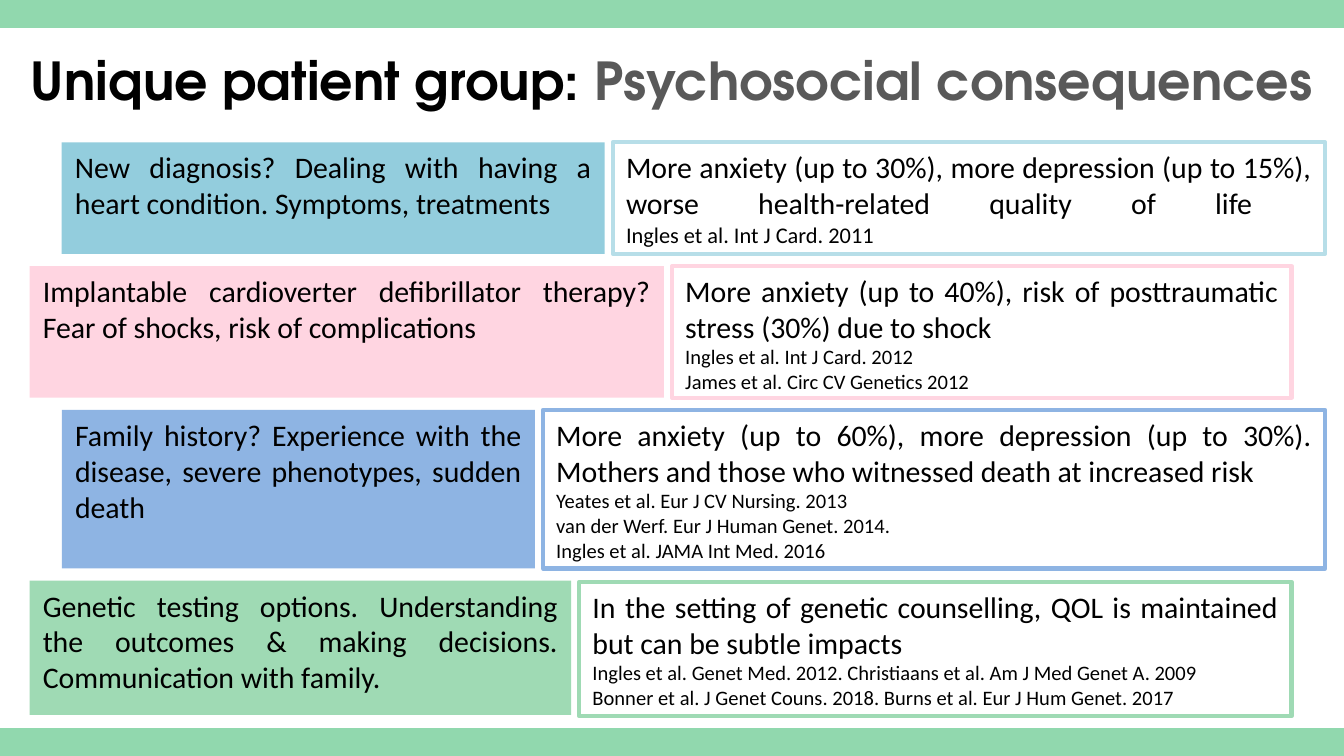
import pptx
import pptx.util
import pptx.dml.color
import pptx.enum.shapes
import pptx.enum.text

Inches, Pt = pptx.util.Inches, pptx.util.Pt
ALIGN = pptx.enum.text.PP_ALIGN
ANCHOR = pptx.enum.text.MSO_ANCHOR

# Content
TITLE = [("Unique patient group: ", "title"), ("Psychosocial consequences", "subtitle")]
ROWS = [
    dict(issue="New diagnosis? Dealing with having a heart condition. Symptoms, treatments",
         finding="More anxiety (up to 30%), more depression (up to 15%), "
                 "worse health-related quality of life ",
         refs=["Ingles et al. Int J Card. 2011"], ref_size=12, same_paragraph=True,
         fill="93CDDD", line="B7DEE8", width=4.04, height=0.83),
    dict(issue="Implantable cardioverter defibrillator therapy? "
               "Fear of shocks, risk of complications",
         finding="More anxiety (up to 40%), risk of posttraumatic stress (30%) due to shock",
         refs=["Ingles et al. Int J Card. 2012", "James et al. Circ CV Genetics 2012"],
         fill="FFD5E1", line="FFD5E1", width=4.72, height=0.98),
    dict(issue="Family history? Experience with the disease, severe phenotypes, sudden death",
         finding="More anxiety (up to 60%), more depression (up to 30%). "
                 "Mothers and those who witnessed death at increased risk",
         refs=["Yeates et al. Eur J CV Nursing. 2013",
               "van der Werf. Eur J Human Genet. 2014.",
               "Ingles et al. JAMA Int Med. 2016"],
         fill="8EB4E3", line="8EB4E3", width=3.52, height=1.18),
    dict(issue="Genetic testing options. Understanding the outcomes & making decisions. "
               "Communication with family.",
         finding="In the setting of genetic counselling, QOL is maintained "
                 "but can be subtle impacts",
         refs=["Ingles et al. Genet Med. 2012. Christiaans et al. Am J Med Genet A. 2009",
               "Bonner et al. J Genet Couns. 2018. Burns et al. Eur J Hum Genet. 2017"],
         fill="9FDAB4", line="9FDAB4", width=4.03, height=1.0, drop=0.01),
]

THEME = dict(title="000000", subtitle="595959", text="000000", band="91D8AE",
             title_font="TeX Gyre Adventor", body_font="Calibri",
             title_size=28, body_size=16, ref_size=11, band_line=3, box_line=2.25)

# Layout: rows alternate between two horizontal extents
EXTENTS = [(0.46, 9.86), (0.22, 9.61)]
FIRST_TOP, ROW_GAP, COLUMN_GAP = 1.06, 0.09, 0.06


def rgb(value):
    return pptx.dml.color.RGBColor.from_string(value)


def add_run(p, text, size, color=THEME["text"], font=THEME["body_font"], bold=False):
    r = p.add_run()
    r.text = text
    r.font.size, r.font.name, r.font.bold = Pt(size), font, bold
    r.font.color.rgb = rgb(color)


def add_box(s, left, top, width, height, fill=None, line=None, line_width=0):
    sp = s.shapes.add_shape(pptx.enum.shapes.MSO_SHAPE.RECTANGLE, Inches(left),
                            Inches(top), Inches(width), Inches(height))
    sp.shadow.inherit = False
    if fill:
        sp.fill.solid()
        sp.fill.fore_color.rgb = rgb(fill)
    else:
        sp.fill.background()
    if line:
        sp.line.color.rgb = rgb(line)
        sp.line.width = Pt(line_width)
    else:
        sp.line.fill.background()
    tf = sp.text_frame
    tf.word_wrap = True
    tf.vertical_anchor = ANCHOR.TOP
    tf.paragraphs[0].alignment = ALIGN.JUSTIFY
    return tf


def add_row(s, row, left, right, top):
    width, height = row["width"], row["height"]
    tf = add_box(s, left, top, width, height, fill=row["fill"])
    add_run(tf.paragraphs[0], row["issue"], THEME["body_size"])

    start = left + width + COLUMN_GAP
    tf = add_box(s, start, top + row.get("drop", 0), right - start, height,
                 line=row["line"], line_width=THEME["box_line"])
    p = tf.paragraphs[0]
    add_run(p, row["finding"], THEME["body_size"])
    for ref in row["refs"]:
        if row.get("same_paragraph"):
            p.add_line_break()
        else:
            p = tf.add_paragraph()
            p.alignment = ALIGN.JUSTIFY
        add_run(p, ref, row.get("ref_size", THEME["ref_size"]))


# Widescreen slide, 16:9
prs = pptx.Presentation()
prs.slide_width = Inches(10)
prs.slide_height = Inches(10 * 9 / 16)
s = prs.slides.add_slide(prs.slide_layouts[6])

# Top and bottom bands
for top in (0.02, 5.44):
    add_box(s, 0, top, 10, 0.17, THEME["band"], THEME["band"], THEME["band_line"])

# Title
tf = s.shapes.add_textbox(Inches(0.11), Inches(0.29), Inches(9.77), Inches(0.61)).text_frame
tf.word_wrap = True
tf.vertical_anchor = ANCHOR.MIDDLE
tf.margin_left = tf.margin_right = Inches(0.05)
p = tf.paragraphs[0]
p.alignment = ALIGN.CENTER
for text, role in TITLE:
    add_run(p, text, THEME["title_size"], THEME[role], THEME["title_font"], bold=True)

# Issue and finding pairs
top = FIRST_TOP
for i, row in enumerate(ROWS):
    left, right = EXTENTS[i % 2]
    add_row(s, row, left, right, top)
    top += row["height"] + ROW_GAP

prs.save("out.pptx")
